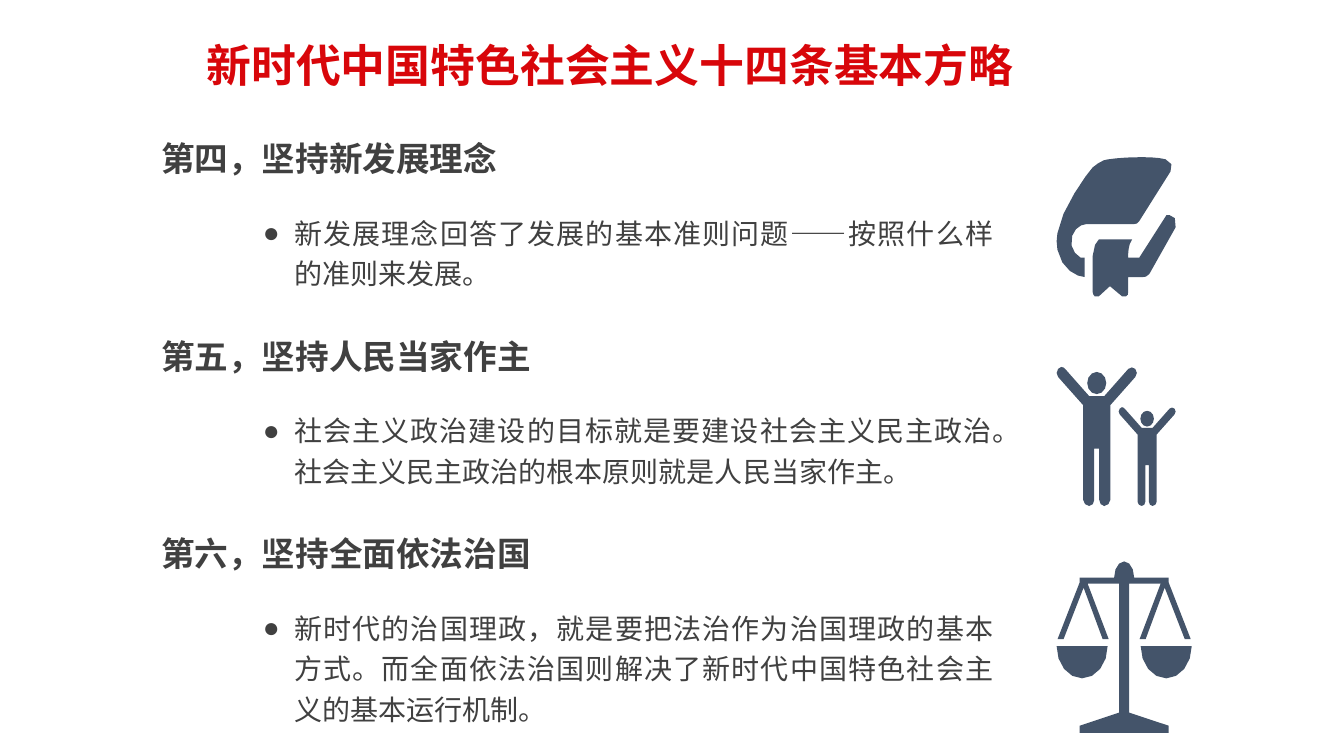
import math
import lxml.etree
import pptx
import pptx.dml.color
import pptx.enum.lang
import pptx.enum.text
import pptx.oxml.ns
import pptx.util

Inches = pptx.util.Inches
qn = pptx.oxml.ns.qn
HUES = {"title": "D8060A", "text": "404040", "icon": "44546A"}
SANS = "Noto Sans CJK SC"
TITLE = "新时代中国特色社会主义十四条基本方略"
ITEMS = [
    ("第四，坚持新发展理念", 3.57,
     "新发展理念回答了发展的基本准则问题——按照什么样的准则来发展。", 0.91),
    ("第五，坚持人民当家作主", 3.9,
     "社会主义政治建设的目标就是要建设社会主义民主政治。"
     "社会主义民主政治的根本原则就是人民当家作主。", 0.91),
    ("第六，坚持全面依法治国", 3.9,
     "新时代的治国理政，就是要把法治作为治国理政的基本方式。"
     "而全面依法治国则解决了新时代中国特色社会主义的基本运行机制。", 1.31),
]
COVER = [
    (81, 0), (90, 0, 100, 0, 108, 2), (115, 3, 115, 10, 113, 14), (82, 63),
    (81, 65, 79, 66, 76, 66), (29, 66), (24, 66, 13, 72, 15, 87),
    (16, 92, 20, 97, 24, 99), (28, 99), (28, 118),
    (21, 118, 5, 111, 1, 91), (0, 85, 0, 80, 1, 75),
    (4, 52, 31, 15, 36, 10), (39, 7, 43, 5, 47, 3), (50, 2, 65, 0, 81, 0),
]
MARK = [
    (109, 57), (112, 57), (116, 57, 120, 61, 118, 69), (92, 115),
    (90, 118, 87, 118, 86, 118), (71, 118), (71, 133),
    (71, 135, 71, 136, 69, 137), (68, 138, 66, 138, 65, 137), (53, 127),
    (42, 137), (41, 138, 39, 138, 38, 137), (37, 136, 36, 135, 36, 133),
    (36, 97), (36, 88, 40, 83, 42, 81), (75, 81),
    (71, 86, 71, 95, 71, 99), (82, 99),
]
BODY = [
    (5, 0), (7, 0, 8, 1, 9, 2), (33, 29), (48, 29), (72, 2),
    (74, 0, 77, 0, 79, 2), (81, 4, 81, 8, 79, 10), (54, 38), (54, 132),
    (54, 135, 51, 138, 48, 138), (45, 138, 43, 135, 43, 132), (43, 81),
    (38, 81), (38, 132), (38, 135, 36, 138, 33, 138),
    (30, 138, 27, 135, 27, 132), (27, 38), (2, 10),
    (0, 8, 0, 4, 2, 2), (3, 1, 4, 0, 5, 0),
]
BEAM = [
    (112, 16), (112, 21), (134, 77), (128, 77), (108, 26), (89, 77),
    (83, 77), (104, 22), (72.5, 22), (72.5, 150), (112, 163), (112, 170),
]


def trace(steps):
    """Turn points and cubic curves into a short list of points."""
    out = []
    for step in steps:
        if len(step) == 2:
            out.append(step)
            continue
        knots = [out[-1], step[:2], step[2:4], step[4:]]
        reach = math.dist(knots[0], knots[3])
        count = 4 if reach > 18 else 2 if reach > 4 else 1
        for n in range(1, count + 1):
            t = n / count
            wts = [(1 - t) ** 3, 3 * t * (1 - t) ** 2, 3 * t * t * (1 - t), t ** 3]
            out.append(tuple(sum(w * k[i] for w, k in zip(wts, knots)) for i in (0, 1)))
    return out


def arc(cx, cy, rx, ry, start, end, count):
    """Return points along an ellipse between two angles in degrees."""
    turns = [math.radians(start + (end - start) * n / count) for n in range(count + 1)]
    return [(cx + rx * math.cos(a), cy + ry * math.sin(a)) for a in turns]


def book():
    """Return the loops of the book."""
    return [trace(COVER), trace(MARK)]


def family():
    """Return the loops of an adult and a smaller child."""
    adult = [trace(BODY), arc(40.5, 16, 9.5, 11, 0, 360, 12)]
    child = [[(62 + 0.71 * x, 40 + 0.71 * y) for x, y in loop] for loop in adult]
    return adult + child


def scales():
    """Return the loops of the balance, mirrored about its post."""
    half = arc(67.5, 16, 10, 16, -90, 0, 3)[:-1] + [(77.5, 16)] + BEAM
    frame = half + [(135 - x, y) for x, y in reversed(half[1:])]
    return [frame] + [arc(x, 84, 25.5, 32, 0, 180, 8) for x in (25.5, 109.5)]


def icon(slide, box, loops):
    """Draw loops as one shape that fills the box."""
    xs, ys = zip(*[spot for loop in loops for spot in loop])
    left, top, wide, high = box
    kx, ky = wide / (max(xs) - min(xs)), high / (max(ys) - min(ys))
    pen = None
    for loop in loops:
        spots = [(Inches(left + (x - min(xs)) * kx), Inches(top + (y - min(ys)) * ky))
                 for x, y in loop]
        if pen is None:
            pen = slide.shapes.build_freeform(*spots[0], scale=1.0)
        else:
            pen.move_to(*spots[0])
        pen.add_line_segments(spots[1:], close=True)
    shape = pen.convert_to_shape()
    shape.shadow.inherit = False
    shape.fill.solid()
    shape.fill.fore_color.rgb = pptx.dml.color.RGBColor.from_string(HUES["icon"])
    shape.line.fill.background()


def label(slide, box, text, size, hue="text", face="Arial", bold=False,
          wrap=True, bullet=False, space=1.2):
    """Place one paragraph of text in the box."""
    frame = slide.shapes.add_textbox(*map(Inches, box)).text_frame
    frame.word_wrap = wrap
    frame.auto_size = pptx.enum.text.MSO_AUTO_SIZE.SHAPE_TO_FIT_TEXT
    para = frame.paragraphs[0]
    para.text = text
    props = para._p.get_or_add_pPr()
    if bullet:
        props.set("marL", str(Inches(0.31)))
        props.set("indent", str(Inches(-0.31)))
        lxml.etree.SubElement(props, qn("a:buFont")).set("typeface", "Arial")
        lxml.etree.SubElement(props, qn("a:buChar")).set("char", "●")
        para.alignment = pptx.enum.text.PP_ALIGN.JUSTIFY
    para.line_spacing = space
    font = para.font
    font.size = pptx.util.Pt(size)
    font.bold = bold
    font.name = face
    font.language_id = pptx.enum.lang.MSO_LANGUAGE_ID.SIMPLIFIED_CHINESE
    font.color.rgb = pptx.dml.color.RGBColor.from_string(HUES[hue])
    east = lxml.etree.SubElement(props.find(qn("a:defRPr")), qn("a:ea"))
    east.set("typeface", SANS)


def item(slide, left, top, head, wide, body, high):
    """Place a heading with its bullet below."""
    label(slide, (left, top, wide, 0.54), head, 24, bold=True, wrap=False)
    label(slide, (left + 1.01, top + 0.79, 7.44, high), body, 20, bullet=True)


def main():
    """Build the slide and save it."""
    deck = pptx.Presentation()
    deck.slide_width, deck.slide_height = Inches(13.33), Inches(7.5)
    slide = deck.slides.add_slide(deck.slide_layouts[6])
    for n, parts in enumerate(ITEMS):
        item(slide, 1.5, 1.24 + 1.96 * n, *parts)
    icon(slide, (10.48, 3.64, 1.18, 1.38), family())
    icon(slide, (10.48, 1.56, 1.18, 1.38), book())
    icon(slide, (10.48, 5.57, 1.34, 1.7), scales())
    label(slide, (1.95, 0.33, 8.25, 0.64), TITLE, 32, "title", SANS, True, space=1.0)
    deck.save("out.pptx")


if __name__ == "__main__":
    main()
